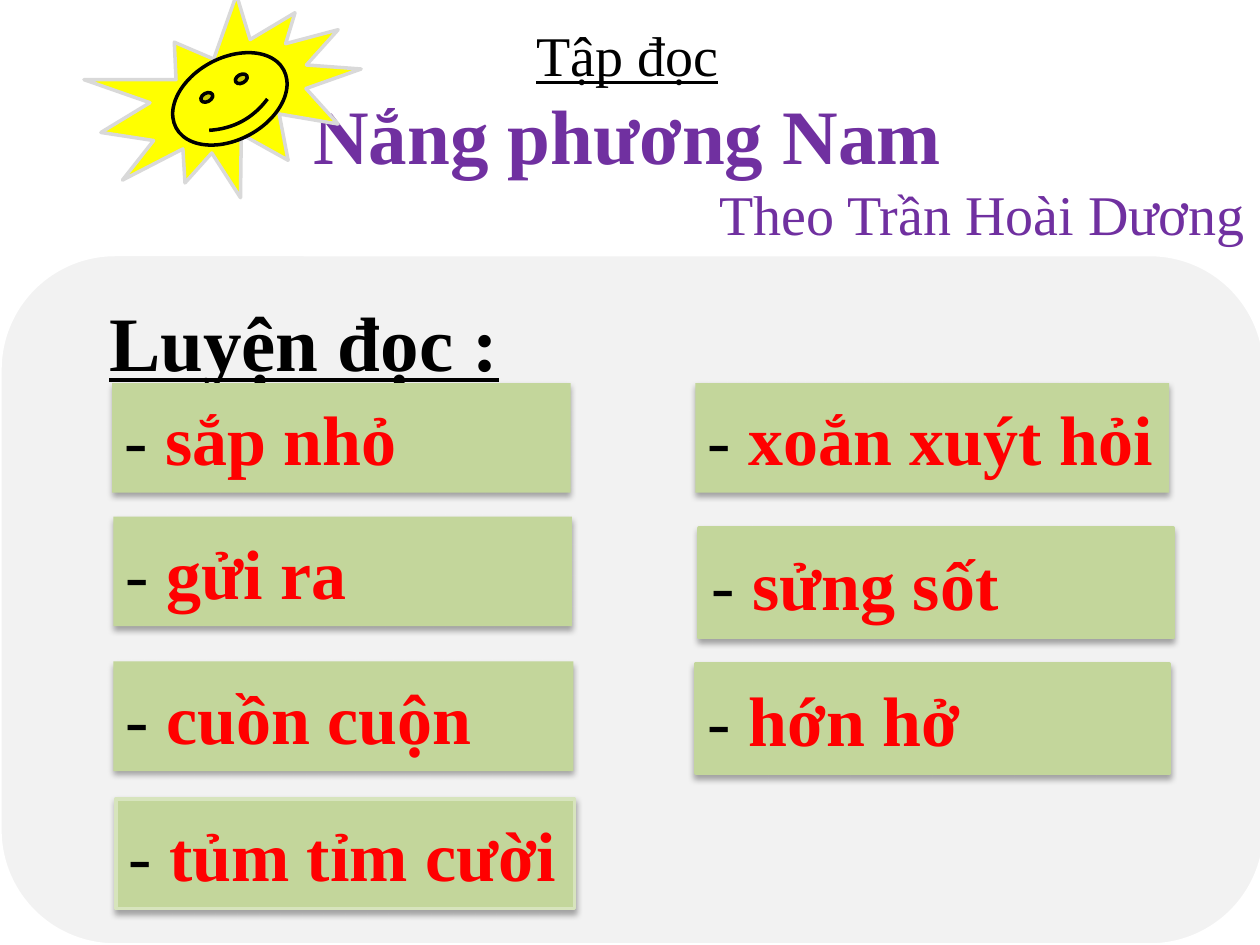
import pptx
import pptx.dml.color
import pptx.enum.shapes
import pptx.enum.text
import pptx.oxml
import pptx.oxml.ns
import pptx.util
from pptx.util import Inches

RGBColor = pptx.dml.color.RGBColor
SHAPE = pptx.enum.shapes.MSO_SHAPE
ALIGN = pptx.enum.text.PP_ALIGN
ANCHOR = pptx.enum.text.MSO_ANCHOR

BLACK = RGBColor(0x00, 0x00, 0x00)
WHITE = RGBColor(0xFF, 0xFF, 0xFF)
PANEL_GRAY = RGBColor(0xF2, 0xF2, 0xF2)
RAY_GRAY = RGBColor(0xD9, 0xD9, 0xD9)
CARD_GREEN = RGBColor(0xC3, 0xD6, 0x9B)
PALE_GREEN = RGBColor(0xD7, 0xE4, 0xBD)
RED = RGBColor(0xFF, 0x00, 0x00)
PURPLE = RGBColor(0x70, 0x30, 0xA0)
YELLOW = RGBColor(0xFF, 0xFF, 0x00)

CARD_SHADOW = (
    f'<a:effectLst {pptx.oxml.ns.nsdecls("a")}>'
    '<a:outerShdw blurRad="44450" dist="27940" dir="5400000" algn="ctr" rotWithShape="0">'
    '<a:srgbClr val="000000"><a:alpha val="32000"/></a:srgbClr>'
    '</a:outerShdw></a:effectLst>'
)

deck = pptx.Presentation()
deck.slide_width, deck.slide_height = Inches(10), Inches(7.5)
slide = deck.slides.add_slide(deck.slide_layouts[6])


def add_figure(preset, box, fill, outline=None, rotation=0):
    figure = slide.shapes.add_shape(preset, *map(Inches, box))
    figure.shadow.inherit = False
    figure.rotation = rotation
    figure.fill.solid()
    figure.fill.fore_color.rgb = fill
    if outline is None:
        figure.line.fill.background()
    else:
        figure.line.color.rgb = outline
        figure.line.width = pptx.util.Pt(2)
    return figure


def add_words(paragraph, words, size, color, **formats):
    run = paragraph.add_run()
    run.text = words
    run.font.color.rgb = color
    settings = {"name": "Times New Roman", "size": pptx.util.Pt(size), **formats}
    for key, value in settings.items():
        setattr(run.font, key, value)


# Rounded panel with the section heading
panel = add_figure(SHAPE.FLOWCHART_ALTERNATE_PROCESS, (0, 2.02, 10.04, 5.48), PANEL_GRAY, WHITE)
panel.text_frame.vertical_anchor = ANCHOR.TOP
heading = panel.text_frame.paragraphs[0]
heading.alignment = ALIGN.LEFT
heading.level = 1
heading_format = heading._p.get_or_add_pPr()
heading_format.set("marL", str(Inches(0.5)))
heading_format.set("indent", "0")
add_words(heading, "Luyện đọc :", 44, BLACK, bold=True, underline=True)

# Word cards: phrase, left, top, width, outline
cards = [
    ("sắp nhỏ", 0.89, 3.04, 3.64, None),
    ("gửi ra", 0.9, 4.1, 3.64, None),
    ("cuồn cuộn", 0.9, 5.25, 3.65, None),
    ("tủm tỉm cười", 0.92, 6.34, 3.64, PALE_GREEN),
    ("xoắn xuýt hỏi", 5.52, 3.04, 3.76, None),
    ("sửng sốt", 5.55, 4.19, 3.76, CARD_GREEN),
    ("hớn hở", 5.52, 5.27, 3.76, CARD_GREEN),
]
for phrase, left, top, width, outline in cards:
    card = add_figure(SHAPE.RECTANGLE, (left, top, width, 0.87), CARD_GREEN, outline)
    properties = card._element.spPr
    properties.remove(properties.find(pptx.oxml.ns.qn("a:effectLst")))
    properties.append(pptx.oxml.parse_xml(CARD_SHADOW))
    card.text_frame.vertical_anchor = ANCHOR.MIDDLE
    card.text_frame.word_wrap = True
    line = card.text_frame.paragraphs[0]
    line.alignment = ALIGN.LEFT
    add_words(line, "- ", 40, BLACK)
    add_words(line, phrase, 40, RED, bold=True)

# Lesson title and author
title = slide.shapes.add_textbox(*map(Inches, (-0.02, 0.11, 10, 1.92))).text_frame
title.word_wrap = True
title_lines = [
    ("Tập đọc", 32, BLACK, ALIGN.CENTER, {"underline": True}),
    ("Nắng phương Nam", 44, PURPLE, ALIGN.CENTER, {"bold": True}),
    ("Theo Trần Hoài Dương", 32, PURPLE, ALIGN.RIGHT, {}),
]
for index, (words, size, color, alignment, formats) in enumerate(title_lines):
    line = title.add_paragraph() if index else title.paragraphs[0]
    line.alignment = alignment
    add_words(line, words, size, color, **formats)

# Smiling sun
add_figure(SHAPE.EXPLOSION1, (0.78, 0.04, 2.1, 1.5), YELLOW, RAY_GRAY, 337.5)
add_figure(SHAPE.SMILEY_FACE, (1.34, 0.46, 0.97, 0.65), YELLOW, BLACK, 331.7)

deck.save("out.pptx")
